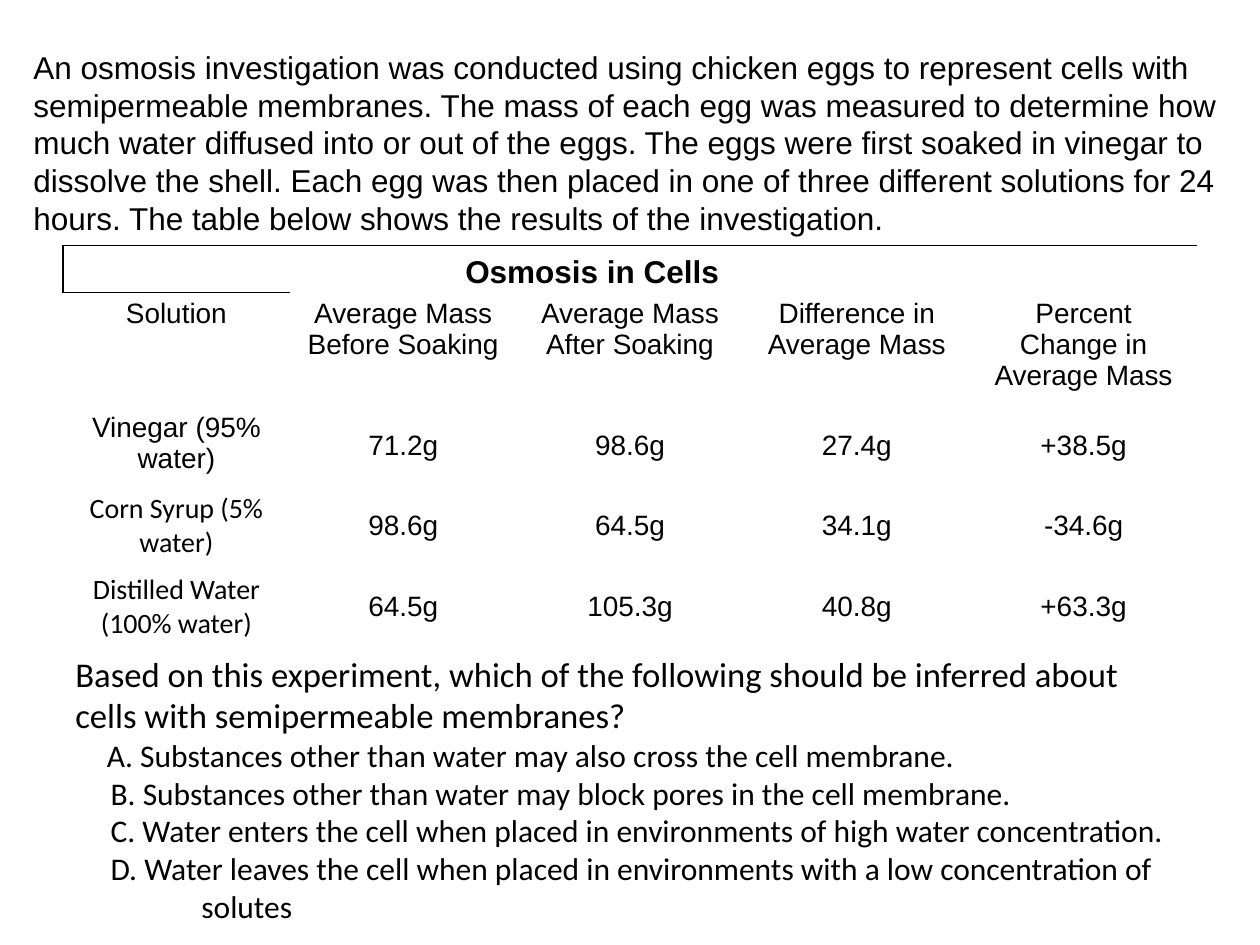
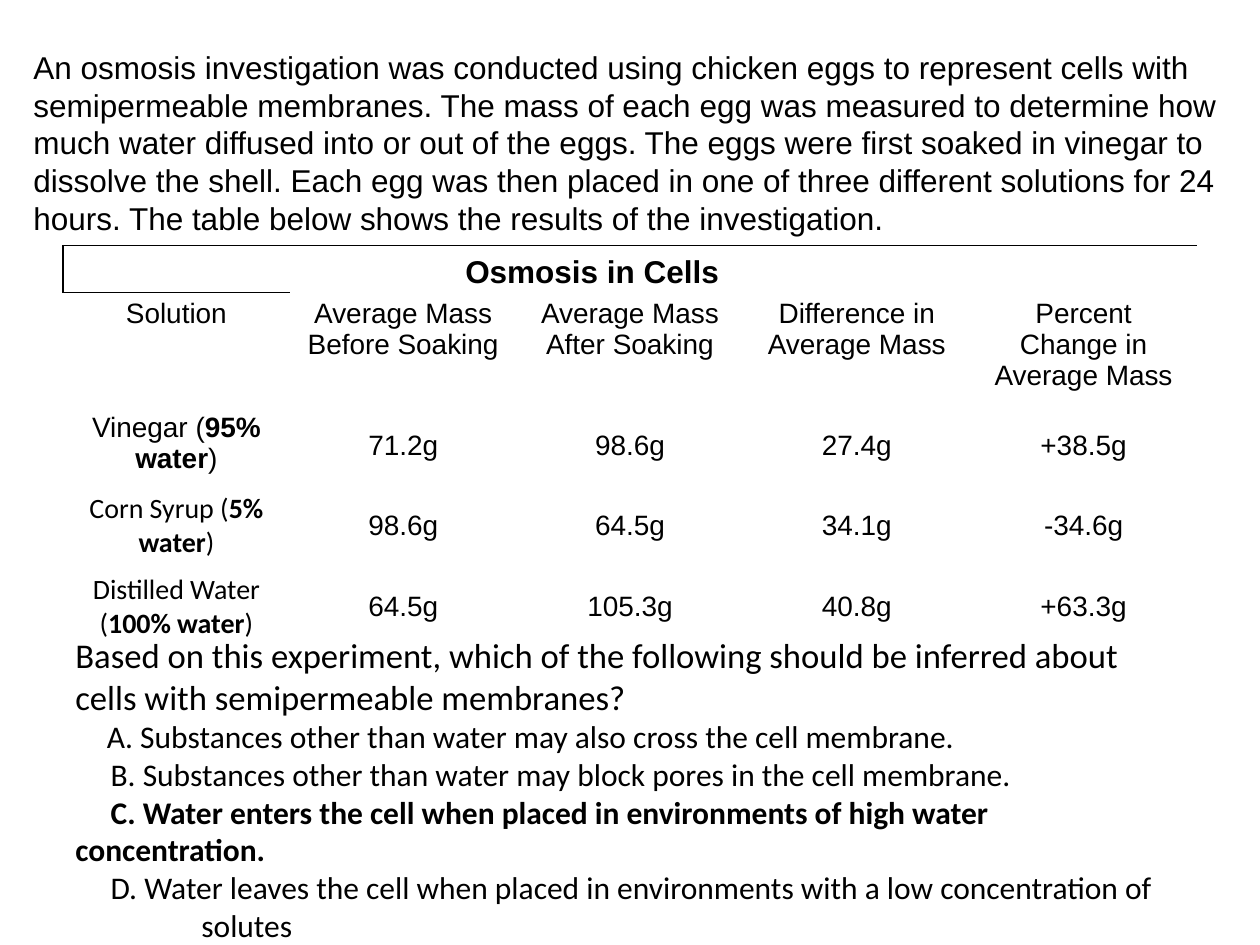
from lxml.etree import SubElement
from pptx import Presentation
from pptx.dml.color import RGBColor
from pptx.enum.text import MSO_ANCHOR as Anchor, PP_ALIGN as Align
from pptx.oxml.ns import qn
from pptx.util import Inches, Pt

WIDTH, HEIGHT = 10, 7.5
MARGIN = WIDTH / 20
CONTENT = WIDTH - 2 * MARGIN
INK = "000000"
ROW_HEIGHTS = [0.37, 0.84, 0.6, 0.64, 0.64]

INTRO = (
    "An osmosis investigation was conducted using chicken eggs to represent cells with "
    "semipermeable membranes. The mass of each egg was measured to determine how much water "
    "diffused into or out of the eggs. The eggs were first soaked in vinegar to dissolve the "
    "shell. Each egg was then placed in one of three different solutions for 24 hours. "
    "The table below shows the results of the investigation."
)
HEADERS = ["Solution", "Average Mass Before Soaking", "Average Mass After Soaking",
           "Difference in Average Mass", "Percent Change in Average Mass"]
RESULTS = [
    ("Vinegar", "95% water", "Arial", ["71.2g", "98.6g", "27.4g", "+38.5g"]),
    ("Corn Syrup", "5% water", "Calibri", ["98.6g", "64.5g", "34.1g", "-34.6g"]),
    ("Distilled Water", "100% water", "Calibri", ["64.5g", "105.3g", "40.8g", "+63.3g"]),
]
QUESTION = ("Based on this experiment, which of the following should be inferred about "
            "cells with semipermeable membranes?")
CHOICES = [
    ("A. Substances other than water may also cross the cell membrane.", 0, 0.25),
    ("B. Substances other than water may block pores in the cell membrane.", 0, 0.28),
    ("C. Water enters the cell when placed in environments of high water concentration.", 0, 0.28),
    ("D. Water leaves the cell when placed in environments with a low concentration of solutes",
     1, -0.72),
]


def write(para, text, size, name="Arial", bold=False):
    span = para.add_run()
    span.text = text
    span.font.color.rgb = RGBColor.from_string(INK)
    for key, value in {"size": Pt(size), "name": name, "bold": bold}.items():
        setattr(span.font, key, value)


def add_box(page, left, top, width, height, **formats):
    box = page.shapes.add_textbox(*map(Inches, (left, top, width, height)))
    for key, value in {"word_wrap": True, **formats}.items():
        setattr(box.text_frame, key, value)
    return box.text_frame


deck = Presentation()
deck.slide_width, deck.slide_height = Inches(WIDTH), Inches(HEIGHT)

for answer_shown in (False, True):
    page = deck.slides.add_slide(deck.slide_layouts[6])

    question = add_box(page, MARGIN, 5.42, CONTENT, 1.75,
                       vertical_anchor=Anchor.MIDDLE, margin_bottom=Inches(0.12))
    write(question.paragraphs[0], QUESTION, 19.8, "Calibri")
    for choice, margin, indent in CHOICES:
        para = question.add_paragraph()
        layout = para._p.get_or_add_pPr()
        layout.set("marL", str(Inches(margin)))
        layout.set("indent", str(Inches(indent)))
        write(para, choice, 18, "Calibri", answer_shown and choice.startswith("C."))

    columns = len(HEADERS)
    frame = page.shapes.add_table(len(ROW_HEIGHTS), columns, Inches(MARGIN), Inches(1.95),
                                  Inches(CONTENT), Inches(sum(ROW_HEIGHTS)))
    table = frame.table
    table.first_row = table.horz_banding = False
    for row, height in zip(table.rows, ROW_HEIGHTS):
        row.height = Inches(height)
    table.cell(0, 0).merge(table.cell(0, columns - 1))

    for row in range(len(ROW_HEIGHTS)):
        for column in range(columns):
            cell = table.cell(row, column)
            borders = {
                "a:lnL": row == 0 and column == 0,
                "a:lnR": row == 0 and column == columns - 1,
                "a:lnT": row == 0 or (row == 1 and column == 0),
                "a:lnB": row == 0 and column == 0,
            }
            for tag, drawn in borders.items():
                line = SubElement(cell._tc.get_or_add_tcPr(), qn(tag), w=str(Pt(1)))
                paint = SubElement(line, qn("a:solidFill" if drawn else "a:noFill"))
                if drawn:
                    SubElement(paint, qn("a:srgbClr"), val=INK)
            cell.fill.background()
            if row == 0:
                cell.margin_top = cell.margin_bottom = Inches(0.02)
                continue
            para = cell.text_frame.paragraphs[0]
            para.alignment = Align.CENTER
            if row == 1:
                write(para, HEADERS[column], 16)
                continue
            solution, share, name, values = RESULTS[row - 2]
            if column == 0:
                write(para, f"{solution} (", 16, name)
                write(para, share, 16, name, answer_shown)
                write(para, ")", 16, name)
            else:
                cell.vertical_anchor = Anchor.MIDDLE
                write(para, values[column - 1], 16)

    caption = add_box(page, 3.58, 1.94, 2.24, 0.86, word_wrap=False, margin_top=Inches(0.06))
    caption.paragraphs[0].alignment = Align.CENTER
    write(caption.paragraphs[0], "Osmosis in Cells", 18, bold=True)

    intro = add_box(page, WIDTH / 60, 0.33, WIDTH * 29 / 30, 1.62)
    write(intro.paragraphs[0], INTRO, 18)

deck.save("out.pptx")
